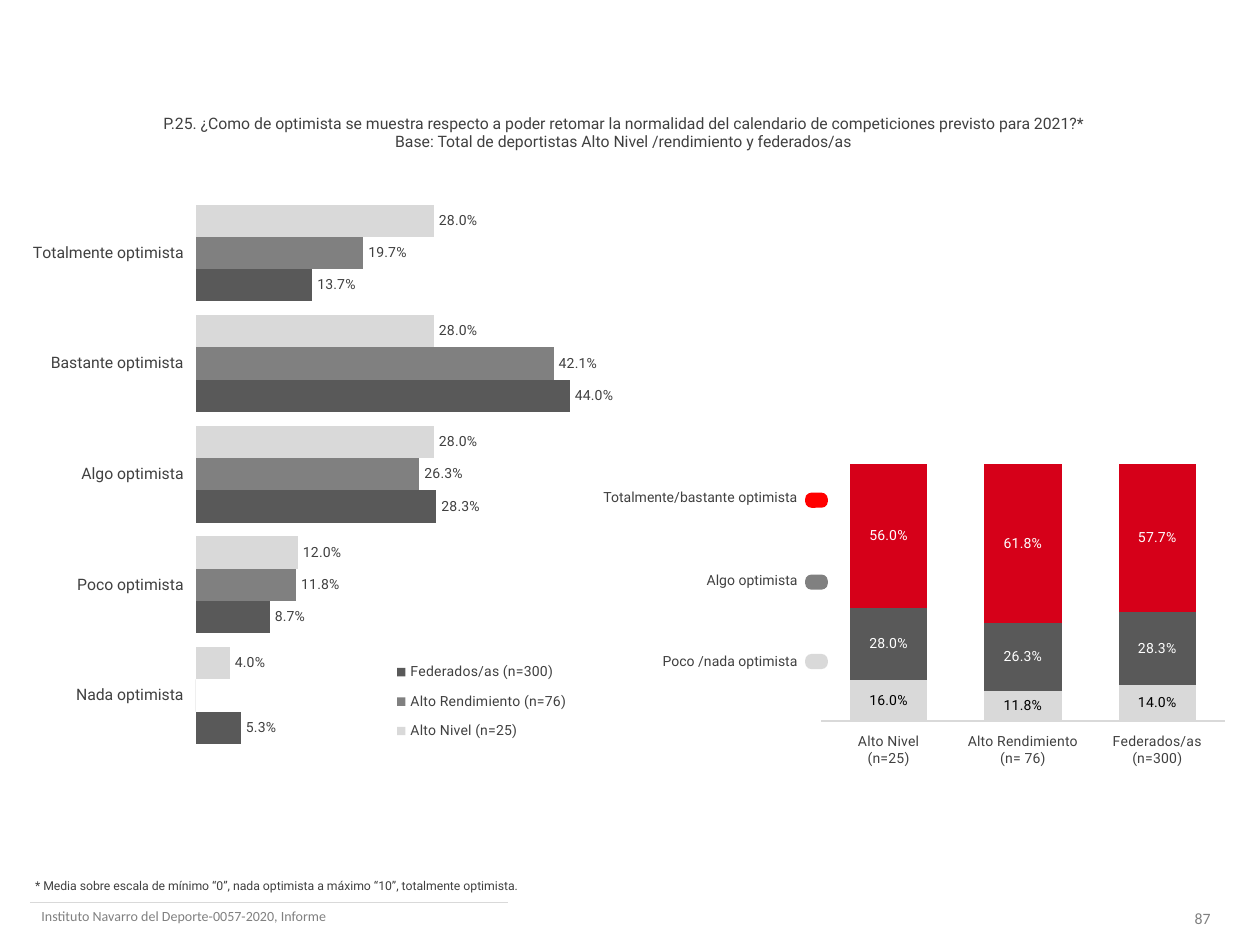
from lxml import etree
from pptx import Presentation
from pptx.chart.data import CategoryChartData
from pptx.dml.color import RGBColor
from pptx.enum.chart import XL_CHART_TYPE as ChartType
from pptx.enum.chart import XL_LABEL_POSITION as LabelPosition
from pptx.enum.chart import XL_LEGEND_POSITION as LegendPosition
from pptx.enum.chart import XL_TICK_LABEL_POSITION as TickLabelPosition
from pptx.enum.chart import XL_TICK_MARK as TickMark
from pptx.enum.shapes import MSO_CONNECTOR as Connector
from pptx.enum.shapes import MSO_SHAPE as Shape
from pptx.enum.text import MSO_ANCHOR as Anchor
from pptx.enum.text import MSO_AUTO_SIZE as AutoSize
from pptx.enum.text import PP_ALIGN as Align
from pptx.oxml.ns import qn
from pptx.util import Inches, Pt

BLACK = RGBColor(0x00, 0x00, 0x00)
WHITE = RGBColor(0xFF, 0xFF, 0xFF)
TEXT = RGBColor(0x40, 0x40, 0x40)
DARK = RGBColor(0x59, 0x59, 0x59)
MEDIUM = RGBColor(0x80, 0x80, 0x80)
LIGHT = RGBColor(0xD9, 0xD9, 0xD9)
CRIMSON = RGBColor(0xD6, 0x00, 0x19)
RED = RGBColor(0xFF, 0x00, 0x00)

QUESTION = [
    "P.25. ¿Como de optimista se muestra respecto a poder retomar la normalidad "
    "del calendario de competiciones previsto para 2021?*",
    "Base: Total de deportistas Alto Nivel /rendimiento y federados/as",
]
FOOTNOTE = "* Media sobre escala de mínimo “0”, nada optimista a máximo “10”, totalmente optimista."
REFERENCE = "Instituto Navarro del Deporte-0057-2020, Informe"

LEVELS = ["Totalmente optimista", "Bastante optimista", "Algo optimista",
          "Poco optimista", "Nada optimista"]
LEVEL_SERIES = [
    ("Alto Nivel (n=25)", [0.28, 0.28, 0.28, 0.12, 0.04], LIGHT, TEXT),
    ("Alto Rendimiento (n=76)", [0.197, 0.421, 0.263, 0.118, 0], MEDIUM, TEXT),
    ("Federados/as (n=300)", [0.137, 0.44, 0.283, 0.087, 0.053], DARK, TEXT),
]
GROUPS = ["Alto Nivel\n(n=25)", "Alto Rendimiento\n(n= 76)", "Federados/as\n(n=300)"]
GROUP_SERIES = [
    ("Poco /nada optimista", [0.16, 0.118, 0.14], LIGHT, BLACK),
    ("Algo optimista", [0.28, 0.263, 0.283], DARK, WHITE),
    ("Totalmente/bastante optimista", [0.56, 0.618, 0.577], CRIMSON, WHITE),
]
KEY_ENTRIES = [
    ("Totalmente/bastante optimista", RED, 3.83, 3.91),
    ("Algo optimista", MEDIUM, 4.49, 4.56),
    ("Poco /nada optimista", LIGHT, 5.13, 5.19),
]


def set_values(target, values):
    """Set each named attribute of the target."""
    for name, value in values.items():
        setattr(target, name, value)


def set_font(font, size, color=TEXT, name="Roboto"):
    """Give a font its size, colour and typeface."""
    set_values(font, {"size": Pt(size), "name": name, "bold": False})
    font.color.rgb = color


def add_text(slide, box, lines, size, color=TEXT, font="Roboto", align=Align.LEFT, **frame_values):
    """Place lines of text in a box, one paragraph each."""
    frame = slide.shapes.add_textbox(*map(Inches, box)).text_frame
    set_values(frame, {"word_wrap": True, "auto_size": AutoSize.SHAPE_TO_FIT_TEXT, **frame_values})
    frame.text = "\n".join(lines)
    for paragraph in frame.paragraphs:
        paragraph.alignment = align
        set_font(paragraph.font, size, color, font)


def set_layout(parent, index, fractions, inner=False):
    """Fix the place of a chart part as fractions of the chart."""
    for old in parent.findall(qn("c:layout")):
        parent.remove(old)
    layout = etree.Element(qn("c:layout"))
    manual = etree.SubElement(layout, qn("c:manualLayout"))
    entries = [("layoutTarget", "inner")] if inner else []
    entries += [("xMode", "edge"), ("yMode", "edge"), *zip("xywh", fractions)]
    for tag, value in entries:
        etree.SubElement(manual, qn(f"c:{tag}")).set("val", str(value))
    parent.insert(index, layout)


def add_percent_chart(slide, box, kind, categories, series_rows, plot_box, maximum, gap, position):
    """Place a labelled percentage chart with a hidden value axis."""
    data = CategoryChartData(number_format="0.0%")
    data.categories = categories
    for name, values, _, _ in series_rows:
        data.add_series(name, values)
    chart = slide.shapes.add_chart(kind, *map(Inches, box), data).chart
    set_values(chart, {"has_title": False, "has_legend": False})
    set_font(chart.font, 8)
    plot = chart.plots[0]
    set_values(plot, {"gap_width": gap, "vary_by_categories": False})
    for series, (_, _, fill, label_color) in zip(plot.series, series_rows):
        series.format.fill.solid()
        series.format.fill.fore_color.rgb = fill
        series.invert_if_negative = False
        labels = series.data_labels
        set_values(labels, {"show_value": True, "number_format": "0.0%;;",
                            "number_format_is_linked": False, "position": position})
        set_font(labels.font, 8, label_color)
    set_values(chart.value_axis, {"visible": False, "has_major_gridlines": False,
                                  "minimum_scale": 0, "maximum_scale": maximum})
    set_values(chart.category_axis, {"major_tick_mark": TickMark.NONE,
                                     "tick_label_position": TickLabelPosition.LOW})
    set_layout(chart.plots[0]._element.getparent(), 0, plot_box, inner=True)
    return chart


def add_level_chart(slide, box):
    """Place the bars by level of optimism, with their legend."""
    chart = add_percent_chart(slide, box, ChartType.BAR_CLUSTERED, LEVELS, LEVEL_SERIES,
                              (0.248, 0.034, 0.538, 0.934), 0.5, 43, LabelPosition.OUTSIDE_END)
    chart.plots[0].overlap = 0
    chart.category_axis.reverse_order = True
    chart.category_axis.format.line.fill.background()
    set_font(chart.category_axis.tick_labels.font, 9)
    chart.has_legend = True
    set_values(chart.legend, {"position": LegendPosition.RIGHT, "include_in_layout": False})
    set_font(chart.legend.font, 8)
    set_layout(chart.legend._element, 1, (0.49, 0.8, 0.24, 0.17))


def add_group_chart(slide, box):
    """Place the stacked columns by group of athletes."""
    chart = add_percent_chart(slide, box, ChartType.COLUMN_STACKED, GROUPS, GROUP_SERIES,
                              (0.135, 0.065, 0.697, 0.772), 1.2, 74, LabelPosition.CENTER)
    chart.plots[0].overlap = 100
    line = chart.category_axis.format.line
    line.color.rgb = LIGHT
    line.width = Pt(0.75)
    set_font(chart.category_axis.tick_labels.font, 8)


def add_key(slide, left, width):
    """Place the key of the stacked columns, label beside swatch."""
    for label, color, label_top, swatch_top in KEY_ENTRIES:
        add_text(slide, (left, label_top, width, 0.24), [label], 8, align=Align.RIGHT)
        swatch_box = (left + width - 0.04, swatch_top, 0.18, 0.12)
        swatch = slide.shapes.add_shape(Shape.ROUNDED_RECTANGLE, *map(Inches, swatch_box))
        swatch.adjustments[0] = 0.41
        swatch.shadow.inherit = False
        swatch.fill.solid()
        swatch.fill.fore_color.rgb = color
        swatch.line.fill.background()


def add_footer(slide, left, top):
    """Place the footnote, rule, reference and page number."""
    add_text(slide, (left - 0.06, top - 0.24, 4.04, 0.22), [FOOTNOTE], 7, word_wrap=False)
    ends = (left, top, left + 3.79, top)
    rule = slide.shapes.add_connector(Connector.STRAIGHT, *map(Inches, ends))
    rule.line.color.rgb = LIGHT
    rule.line.width = Pt(0.5)
    etree.SubElement(rule._element.spPr, qn("a:effectLst"))
    add_text(slide, (left - 0.01, top - 0.01, 3.19, 0.24), [REFERENCE], 8, MEDIUM, "Calibri")
    add_text(slide, (9.21, top, 0.67, 0.25), ["87"], 9, MEDIUM, "Calibri", Align.CENTER,
             vertical_anchor=Anchor.MIDDLE)


def main():
    """Build the slide and save it."""
    presentation = Presentation()
    set_values(presentation, {"slide_width": Inches(10), "slide_height": Inches(7.5)})
    slide = presentation.slides.add_slide(presentation.slide_layouts[6])
    add_text(slide, (0.44, 0.85, 9.07, 0.4), QUESTION, 9, align=Align.CENTER,
             margin_left=Inches(0.04))
    add_level_chart(slide, (0, 1.41, 6.27, 4.7))
    add_group_chart(slide, (5.9, 3.07, 4.59, 3.17))
    add_key(slide, 4.61, 1.82)
    add_footer(slide, 0.24, 7.16)
    presentation.save("out.pptx")


if __name__ == "__main__":
    main()
